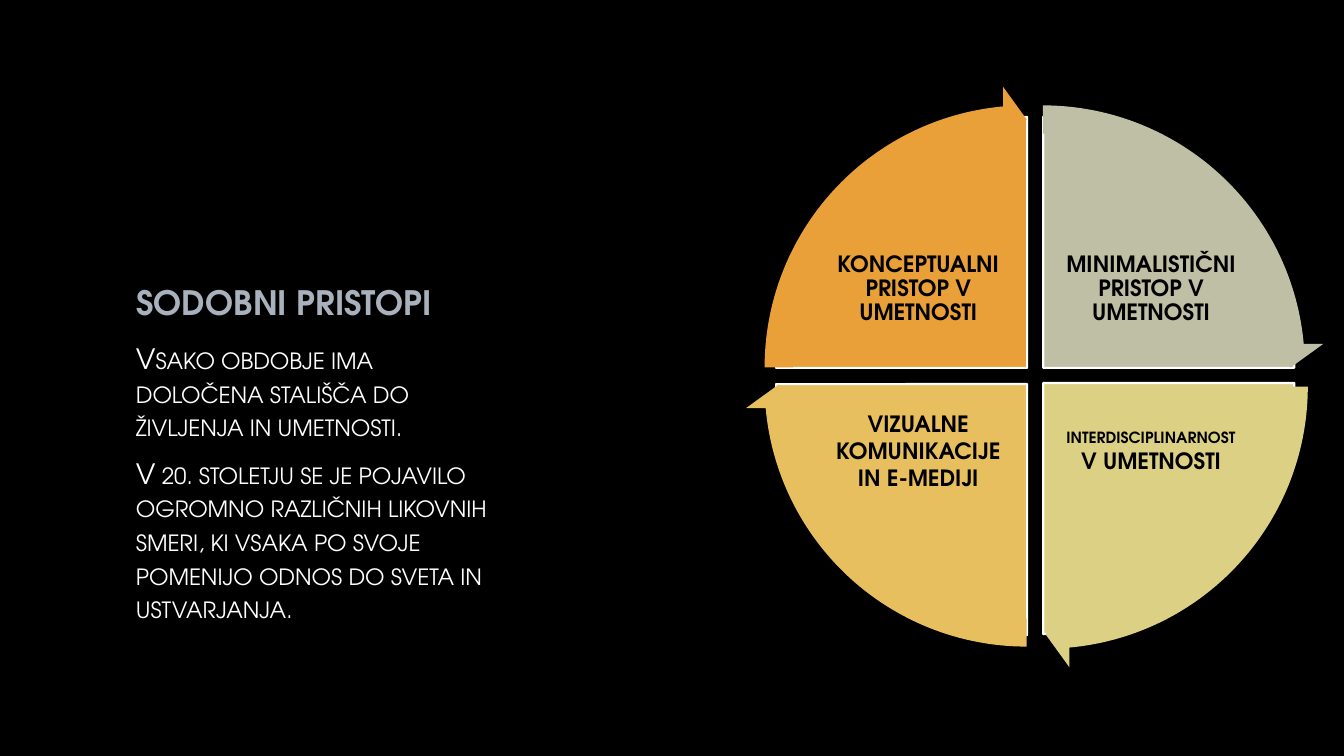
from dataclasses import dataclass

from pptx import Presentation
from pptx.dml.color import RGBColor
from pptx.enum.shapes import MSO_SHAPE
from pptx.enum.text import MSO_ANCHOR, MSO_AUTO_SIZE, PP_ALIGN
from pptx.util import Pt

PIE = MSO_SHAPE.PIE
ARROW = MSO_SHAPE.CIRCULAR_ARROW
TOP, MIDDLE, BOTTOM = MSO_ANCHOR.TOP, MSO_ANCHOR.MIDDLE, MSO_ANCHOR.BOTTOM
LEFT, CENTER = PP_ALIGN.LEFT, PP_ALIGN.CENTER
NO_AUTOFIT = MSO_AUTO_SIZE.NONE

FONT = "TeX Gyre Adventor"
COLOURS = {
    "background": "000000",
    "title": "A8B1BC",
    "body": "FFFFFF",
    "outline": "FFFFFF",
    "label": "000000",
    "minimal": "BFBFA5",
    "interdisciplinary": "DCD084",
    "visual": "E7BF5F",
    "conceptual": "E9A039",
}
PIE_SIZE = 358.56
ARROW_SIZE = 402.48
LABEL_WIDTH, LABEL_HEIGHT = 132.48, 97.92
LABEL_INSET = 1.44
ADJUSTMENT_PER_DEGREE = 0.6
ARROW_SWEEP = 84.54

BODY = [
    "Vsako obdobje ima določena stališča do življenja in umetnosti.",
    "V 20. stoletju se je pojavilo ogromno različnih likovnih smeri, "
    "ki vsaka po svoje pomenijo odnos do sveta in ustvarjanja.",
]


@dataclass(frozen=True)
class Quadrant:
    colour: str
    start: int
    pie: tuple[float, float]
    arrow: tuple[float, float]
    label: tuple[float, float]
    spans: tuple[tuple[str, int], ...]
    line_spacing: float
    lift: float


QUADRANTS = [
    Quadrant("minimal", 270, (565.92, 83.52), (543.6, 61.2), (756, 157.68),
             (("MINIMALISTIČNI PRISTOP V UMETNOSTI", 16),), 0.9, 0),
    Quadrant("interdisciplinary", 0, (565.92, 94.32), (545.76, 74.88), (756, 280.8),
             (("INTERDISCIPLINARNOST ", 11), ("V UMETNOSTI", 16)), 1, 15),
    Quadrant("visual", 90, (554.4, 95.04), (532.08, 73.44), (589.68, 281.52),
             (("VIZUALNE KOMUNIKACIJE IN E-MEDIJI", 16),), 1, 17),
    Quadrant("conceptual", 180, (554.4, 83.52), (532.08, 61.2), (589.68, 157.68),
             (("KONCEPTUALNI PRISTOP V UMETNOSTI", 16),), 0.9, 0),
]


def colour(name: str) -> RGBColor:
    return RGBColor.from_string(COLOURS[name])


def style_font(font, colour_name: str, bold: bool, size: float | None = None) -> None:
    font.name = FONT
    font.bold = bold
    font.color.rgb = colour(colour_name)
    if size:
        font.size = Pt(size)


def prepare_frame(frame, anchor) -> None:
    frame.word_wrap = True
    frame.auto_size = NO_AUTOFIT
    frame.vertical_anchor = anchor


def add_title(page) -> None:
    title = page.shapes.title
    title.left, title.top, title.width, title.height = Pt(90), Pt(126), Pt(279.36), Pt(108)
    prepare_frame(title.text_frame, BOTTOM)
    title.text_frame.text = "SODOBNI PRISTOPI"
    para = title.text_frame.paragraphs[0]
    para.alignment = LEFT
    style_font(para.font, "title", True, 24)


def add_body(page) -> None:
    box = page.shapes.add_textbox(Pt(90), Pt(234), Pt(279.36), Pt(221.76))
    frame = box.text_frame
    prepare_frame(frame, MIDDLE)
    frame.text = "\n".join(BODY)
    for para in frame.paragraphs:
        para.alignment = LEFT
        para.space_before, para.space_after = Pt(4), Pt(6)
        style_font(para.font, "body", False, 20)
        for span in para.runs:
            span.font.size = Pt(20)
            span._r.get_or_add_rPr().set("cap", "small")


def add_round_shape(page, kind, corner: tuple[float, float], size: float,
                    fill: str, adjustments: list[float]):
    shape = page.shapes.add_shape(kind, Pt(corner[0]), Pt(corner[1]), Pt(size), Pt(size))
    shape.shadow.inherit = False
    shape.fill.solid()
    shape.fill.fore_color.rgb = colour(fill)
    for index, value in enumerate(adjustments):
        shape.adjustments[index] = value
    return shape


def add_sector(page, quadrant: Quadrant) -> None:
    end = (quadrant.start + 90) % 360
    angles = [angle * ADJUSTMENT_PER_DEGREE for angle in (quadrant.start, end)]
    sector = add_round_shape(page, PIE, quadrant.pie, PIE_SIZE, quadrant.colour, angles)
    sector.line.color.rgb = colour("outline")
    sector.line.width = Pt(1.5)


def add_label(page, quadrant: Quadrant) -> None:
    left, top = quadrant.label
    box = page.shapes.add_textbox(Pt(left), Pt(top), Pt(LABEL_WIDTH), Pt(LABEL_HEIGHT))
    frame = box.text_frame
    prepare_frame(frame, MIDDLE)
    frame.margin_left = frame.margin_right = frame.margin_top = Pt(LABEL_INSET)
    frame.margin_bottom = Pt(LABEL_INSET + quadrant.lift)
    para = frame.paragraphs[0]
    para.alignment = CENTER
    para.line_spacing = quadrant.line_spacing
    style_font(para.font, "label", True)
    for text, size in quadrant.spans:
        span = para.add_run()
        span.text = text
        span.font.size = Pt(size)


def add_arrow(page, quadrant: Quadrant) -> None:
    start = quadrant.start * ADJUSTMENT_PER_DEGREE
    end = start + ARROW_SWEEP * ADJUSTMENT_PER_DEGREE
    arrow = add_round_shape(page, ARROW, quadrant.arrow, ARROW_SIZE, quadrant.colour,
                            [0.05, 3.28, end, start, 0.06])
    arrow.line.fill.background()


def main() -> None:
    deck = Presentation()
    deck.slide_width, deck.slide_height = Pt(960), Pt(540)
    page = deck.slides.add_slide(deck.slide_layouts[5])
    page.background.fill.solid()
    page.background.fill.fore_color.rgb = colour("background")
    add_title(page)
    add_body(page)
    for quadrant in QUADRANTS:
        add_sector(page, quadrant)
        add_label(page, quadrant)
    for quadrant in QUADRANTS:
        add_arrow(page, quadrant)
    deck.save("out.pptx")


if __name__ == "__main__":
    main()
